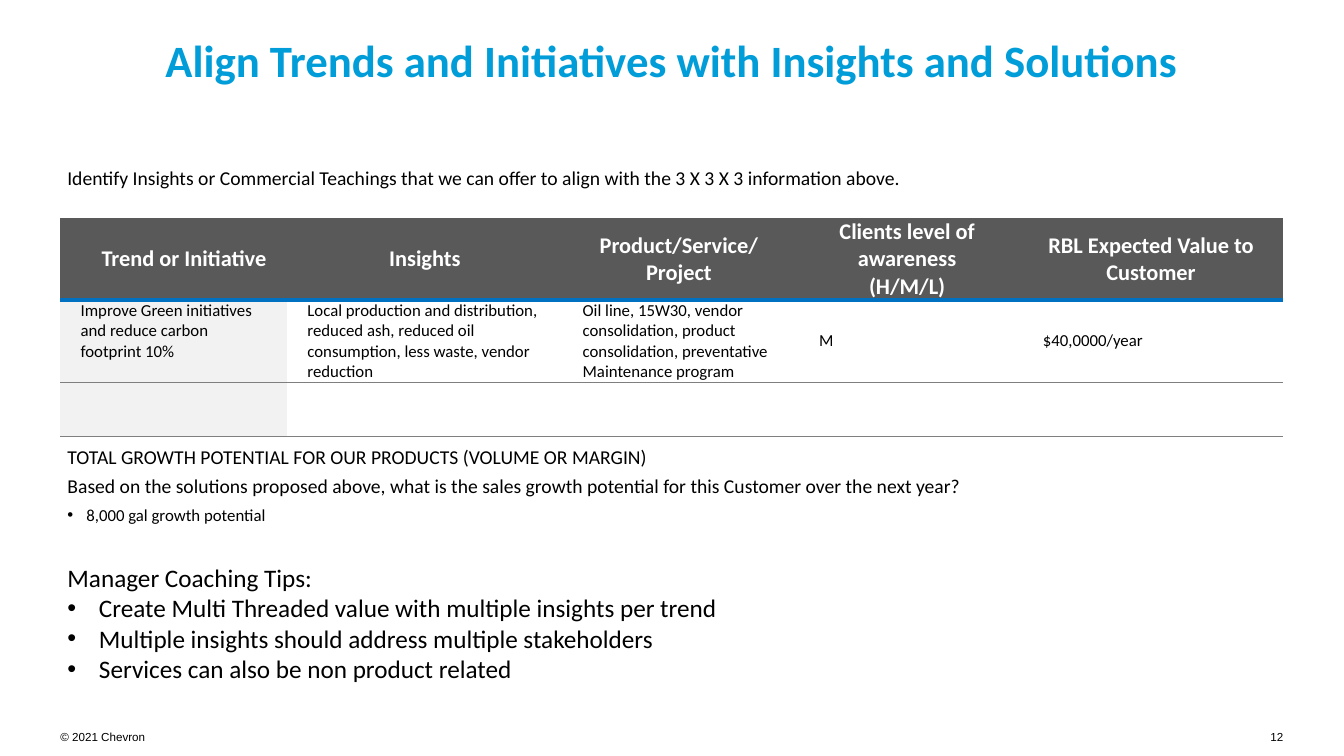
from dataclasses import dataclass

from lxml import etree
from pptx import Presentation
from pptx.dml.color import RGBColor
from pptx.enum.text import MSO_ANCHOR, MSO_AUTO_SIZE, PP_ALIGN
from pptx.oxml.ns import qn
from pptx.util import Pt

LEFT, CENTER, RIGHT = PP_ALIGN.LEFT, PP_ALIGN.CENTER, PP_ALIGN.RIGHT
TOP, MIDDLE = MSO_ANCHOR.TOP, MSO_ANCHOR.MIDDLE
NO_AUTOFIT = MSO_AUTO_SIZE.NONE
COLORS = {"title": "009DD9", "text": "000000", "white": "FFFFFF", "header": "595959",
          "first_column": "F2F2F2", "accent": "0070C0", "rule": "7F7F7F"}
PLAIN_TABLE = "{2D5ABB26-0587-4C30-8999-92F81FD0307C}"
MARGIN_X, CONTENT_W, TEXT_X = 43.2, 873.4, 41
COL_WIDTHS = [162, 196.6, 166.3, 159.8, 188.7]
ROW_HEIGHTS = [58, 58, 39]
ROWS = [
    ["Trend or Initiative", "Insights", "Product/Service/\vProject",
     "Clients level of awareness\n(H/M/L)", "RBL Expected Value to Customer"],
    ["Improve Green initiatives and reduce carbon footprint 10%",
     "Local production and distribution, reduced ash, reduced oil consumption, "
     "less waste, vendor reduction",
     "Oil line, 15W30, vendor consolidation, product consolidation, preventative "
     "Maintenance program",
     " M", " $40,0000/year"],
    [""] * len(COL_WIDTHS),
]


@dataclass
class Line:
    text: str
    size: float
    indent: float = 0  # hanging bullet indent; 0 means no bullet


@dataclass
class Border:
    color: str
    width: float


HEADER_RULE, ROW_RULE = Border("accent", 3), Border("rule", 1)
GROWTH = [
    Line("TOTAL GROWTH POTENTIAL FOR OUR PRODUCTS (VOLUME OR MARGIN)", 14),
    Line("Based on the solutions proposed above, what is the sales growth potential "
         "for this Customer over the next year?", 14),
    Line("8,000 gal growth potential", 12, 13.5),
]
TIPS = [Line("Manager Coaching Tips:", 18)] + [Line(tip, 18, 22.5) for tip in (
    "Create Multi Threaded value with multiple insights per trend",
    "Multiple insights should address multiple stakeholders",
    "Services can also be non product related")]


def rgb(name: str) -> RGBColor:
    return RGBColor.from_string(COLORS[name])


def write(p, text: str, *, size: float, color: str = "text", font: str = "Calibri",
          bold: bool = False, align=LEFT, spacing: float = 1, after: float = 0) -> None:
    p.text = text
    p.alignment, p.line_spacing = align, spacing
    p.space_before, p.space_after = Pt(0), Pt(after)
    for r in p.runs:
        r.font.size, r.font.bold, r.font.name = Pt(size), bold, font
        r.font.color.rgb = rgb(color)


def set_bullet(p, indent: float) -> None:
    """Give the paragraph a hanging bullet, or none when indent is 0."""
    pPr = p._p.get_or_add_pPr()
    pPr.set("marL", str(Pt(indent)))
    pPr.set("indent", str(-Pt(indent)))
    if indent:
        etree.SubElement(pPr, qn("a:buFont"), typeface="Arial")
        etree.SubElement(pPr, qn("a:buChar"), char="•")
    else:
        etree.SubElement(pPr, qn("a:buNone"))


def place(sp, x: float, y: float, w: float, h: float, inset_x: float = 7.2,
          inset_y: float = 3.6):
    """Set the box and its insets; return its text frame."""
    sp.left, sp.top, sp.width, sp.height = Pt(x), Pt(y), Pt(w), Pt(h)
    tf = sp.text_frame
    tf.word_wrap, tf.auto_size, tf.vertical_anchor = True, NO_AUTOFIT, TOP
    tf.margin_left = tf.margin_right = Pt(inset_x)
    tf.margin_top = tf.margin_bottom = Pt(inset_y)
    return tf


def add_box(s):
    return s.shapes.add_textbox(0, 0, 0, 0)


def fill_list(tf, lines: list[Line], **fmt) -> None:
    for i, line in enumerate(lines):
        p = tf.add_paragraph() if i else tf.paragraphs[0]
        write(p, line.text, size=line.size, **fmt)
        set_bullet(p, line.indent)


def add_border(cell, side: str, border: Border) -> None:
    tcPr = cell._tc.get_or_add_tcPr()
    ln = etree.SubElement(tcPr, qn(f"a:{side}"), w=str(Pt(border.width)))
    fill = etree.SubElement(ln, qn("a:solidFill"))
    etree.SubElement(fill, qn("a:srgbClr"), val=COLORS[border.color])


def format_cell(cell, text: str, row: int, col: int) -> None:
    header = row == 0
    cell.margin_left = cell.margin_right = Pt(14.4)
    cell.margin_top = cell.margin_bottom = Pt(0)
    cell.vertical_anchor = TOP if row and col == 0 else MIDDLE
    if not header:
        add_border(cell, "lnT", HEADER_RULE if row == 1 else ROW_RULE)
    add_border(cell, "lnB", HEADER_RULE if header else ROW_RULE)
    cell.fill.solid()
    cell.fill.fore_color.rgb = rgb("header" if header else "white" if col else "first_column")
    tf = cell.text_frame
    for i, part in enumerate(text.split("\n")):
        p = tf.add_paragraph() if i else tf.paragraphs[0]
        if header:
            write(p, part, size=16, color="white", bold=True, align=CENTER)
        else:
            write(p, part, size=12)
    if header and col == 0:
        tf.paragraphs[0]._p.get_or_add_pPr().set("marL", str(Pt(14.4)))


def add_trend_table(s) -> None:
    frame = s.shapes.add_table(len(ROWS), len(COL_WIDTHS), Pt(MARGIN_X), Pt(155.7),
                               Pt(CONTENT_W), Pt(sum(ROW_HEIGHTS)))
    table = frame.table
    table.horz_banding = False
    table._tbl.tblPr.find(qn("a:tableStyleId")).text = PLAIN_TABLE
    for column, width in zip(table.columns, COL_WIDTHS):
        column.width = Pt(width)
    for i, (height, texts) in enumerate(zip(ROW_HEIGHTS, ROWS)):
        table.rows[i].height = Pt(height)
        for j, text in enumerate(texts):
            format_cell(table.cell(i, j), text, i, j)


def main() -> None:
    prs = Presentation()
    prs.slide_width, prs.slide_height = Pt(960), Pt(540)
    s = prs.slides.add_slide(prs.slide_layouts.get_by_name("Two Content"))
    title, growth, tips = s.placeholders

    tf = place(title, MARGIN_X, 18.7, CONTENT_W, 67.7, 0, 4.3)
    write(tf.paragraphs[0], "Align Trends and Initiatives with Insights and Solutions",
          size=32, color="title", bold=True, align=CENTER)

    tf = place(add_box(s), TEXT_X, 116.6, 918.7, 30)
    write(tf.paragraphs[0], "Identify Insights or Commercial Teachings that we can offer "
          "to align with the 3 X 3 X 3 information above.", size=14, spacing=0.9, after=6)
    add_trend_table(s)

    fill_list(place(growth, TEXT_X, 316, 670, 80), GROWTH, spacing=0.9, after=6)
    fill_list(place(tips, TEXT_X, 398.2, 889.2, 116.6), TIPS)
    tips.fill.solid()
    tips.fill.fore_color.rgb = rgb("white")

    for text, x, w, align in (("© 2021 Chevron", MARGIN_X, 85, LEFT),
                              ("12", MARGIN_X + CONTENT_W - 85, 85, RIGHT)):
        tf = place(add_box(s), x, 521.3, w, 10, 0, 0)
        write(tf.paragraphs[0], text, size=8.3, font="Arial", align=align)
    prs.save("out.pptx")


if __name__ == "__main__":
    main()
